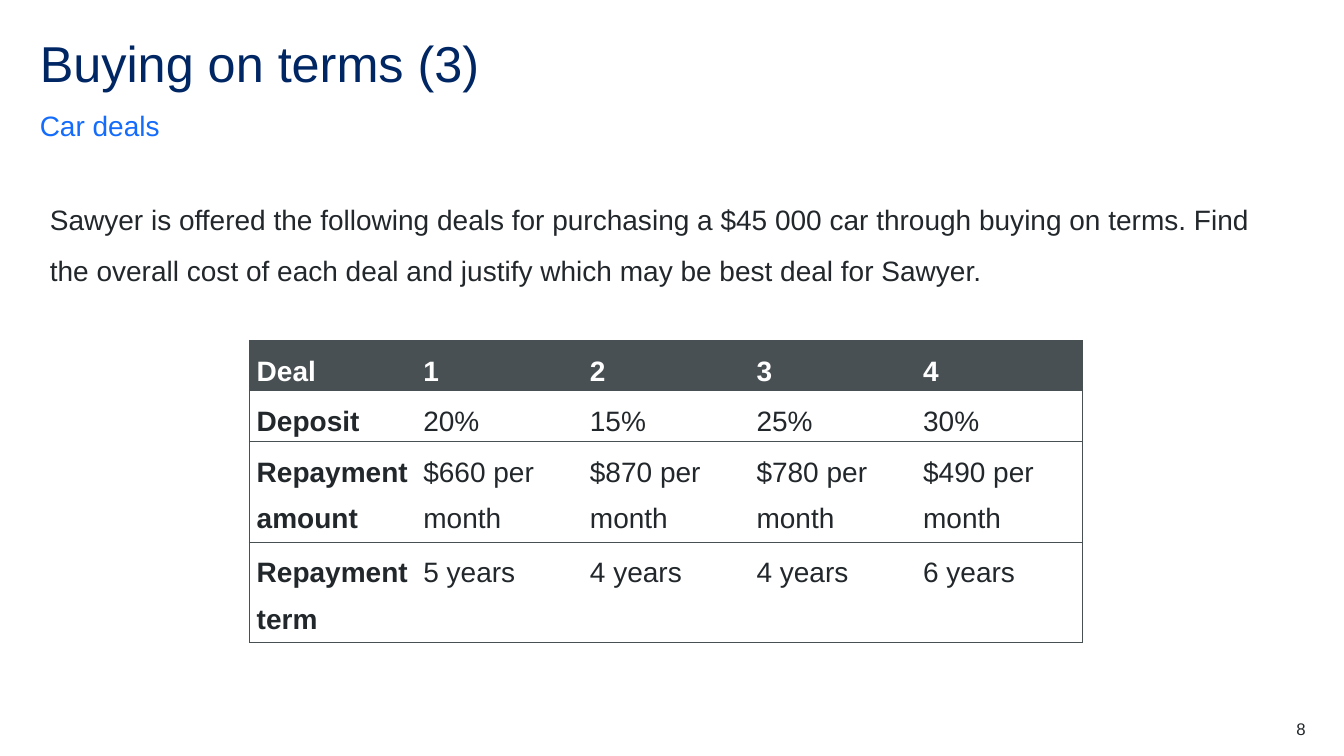
import pptx
import pptx.dml.color
import pptx.enum.text
import pptx.oxml.ns
import pptx.util
import lxml.etree

Pt = pptx.util.Pt
RGBColor = pptx.dml.color.RGBColor
Align = pptx.enum.text.PP_ALIGN
Anchor = pptx.enum.text.MSO_ANCHOR
AutoSize = pptx.enum.text.MSO_AUTO_SIZE

NAVY = RGBColor(0x00, 0x26, 0x64)
BLUE = RGBColor(0x14, 0x6C, 0xFD)
INK = RGBColor(0x22, 0x27, 0x2B)
SLATE = RGBColor(0x49, 0x50, 0x54)
WHITE = RGBColor(0xFF, 0xFF, 0xFF)

FONT = "Arial"
SLIDE_WIDTH, SLIDE_HEIGHT = 960, 540
LEFT = 28.4
CONTENT_WIDTH = 904.3
BORDER_WIDTH = 0.5

QUESTION = (
    "Sawyer is offered the following deals for purchasing a $45 000 car through "
    "buying on terms. Find the overall cost of each deal and justify which may be "
    "best deal for Sawyer."
)
DEALS = [
    ["Deal", "1", "2", "3", "4"],
    ["Deposit", "20%", "15%", "25%", "30%"],
    ["Repayment amount", "$660 per month", "$870 per month", "$780 per month", "$490 per month"],
    ["Repayment term", "5 years", "4 years", "4 years", "6 years"],
]
ROW_HEIGHTS = [36, 36, 72, 72]


def sub_element(parent, tag, **attributes):
    return lxml.etree.SubElement(parent, pptx.oxml.ns.qn(tag), attributes)


def write_text(frame, text, size, color, bold=False, spacing=1.0, before=0, after=0,
               align=Align.LEFT):
    paragraph = frame.paragraphs[0]
    paragraph.alignment = align
    paragraph.line_spacing = spacing
    paragraph.space_before = Pt(before)
    paragraph.space_after = Pt(after)
    run = paragraph.add_run()
    run.text = text
    run.font.name = FONT
    run.font.size = Pt(size)
    run.font.bold = bold
    run.font.color.rgb = color
    return paragraph


def prepare_box(shape, box, anchor, inset_x=0, inset_y=0, auto_size=AutoSize.NONE):
    shape.left, shape.top, shape.width, shape.height = map(Pt, box)
    frame = shape.text_frame
    frame.word_wrap = True
    frame.auto_size = auto_size
    frame.vertical_anchor = anchor
    frame.margin_left = frame.margin_right = Pt(inset_x)
    frame.margin_top = frame.margin_bottom = Pt(inset_y)
    return frame


def remove_bullet(paragraph):
    properties = paragraph._p.get_or_add_pPr()
    properties.set("marL", "0")
    properties.set("indent", "0")
    sub_element(properties, "a:buNone")


def add_heading(slide, box):
    left, top, width, height = box
    title = prepare_box(slide.shapes.title, (left, top, width, 43.2), Anchor.TOP)
    write_text(title, "Buying on terms (3)", 36, NAVY, spacing=0.9)
    subtitle_box = (left, top + height - 24.5, width, 24.5)
    subtitle = prepare_box(slide.placeholders[1], subtitle_box, Anchor.BOTTOM)
    remove_bullet(write_text(subtitle, "Car deals", 20, BLUE, spacing=1.5, after=12))


def add_question(slide, box):
    frame = prepare_box(slide.placeholders[2], box, Anchor.MIDDLE, 7.2, 3.6,
                        AutoSize.SHAPE_TO_FIT_TEXT)
    remove_bullet(write_text(frame, QUESTION, 20, INK, spacing=1.5))


def set_border(cell, side, visible):
    line = sub_element(cell._tc.get_or_add_tcPr(), f"a:ln{side}", w=str(Pt(BORDER_WIDTH)))
    if visible:
        sub_element(sub_element(line, "a:solidFill"), "a:srgbClr", val=str(SLATE))
    else:
        sub_element(line, "a:noFill")


def add_deals_table(slide, box):
    column_count = len(DEALS[0])
    frame = slide.shapes.add_table(len(DEALS), column_count, *map(Pt, box))
    table = frame.table
    table.horz_banding = False
    for column in table.columns:
        column.width = Pt(box[2] / column_count)
    for row_index, values in enumerate(DEALS):
        table.rows[row_index].height = Pt(ROW_HEIGHTS[row_index])
        header = row_index == 0
        for column_index, value in enumerate(values):
            cell = table.cell(row_index, column_index)
            cell.margin_left = cell.margin_right = Pt(5.4)
            cell.margin_top = cell.margin_bottom = 0
            set_border(cell, "L", column_index == 0)
            set_border(cell, "R", column_index == column_count - 1)
            set_border(cell, "T", True)
            set_border(cell, "B", True)
            if header:
                cell.fill.solid()
                cell.fill.fore_color.rgb = SLATE
            else:
                cell.fill.background()
            write_text(cell.text_frame, value, 20, WHITE if header else INK,
                       bold=header or column_index == 0, spacing=1.5, before=6, after=6)


def add_page_number(slide, box):
    shape = slide.shapes.add_textbox(*map(Pt, box))
    frame = prepare_box(shape, box, Anchor.TOP)
    write_text(frame, "8", 12, INK, align=Align.RIGHT)


def main():
    presentation = pptx.Presentation()
    presentation.slide_width = Pt(SLIDE_WIDTH)
    presentation.slide_height = Pt(SLIDE_HEIGHT)
    slide = presentation.slides.add_slide(presentation.slide_layouts.get_by_name("Two Content"))
    add_heading(slide, (LEFT, 28, CONTENT_WIDTH, 73.5))
    add_question(slide, (LEFT, 131, 895, 75.6))
    add_deals_table(slide, (178, 243, 595, sum(ROW_HEIGHTS)))
    add_page_number(slide, (876, 513.5, 56.7, 14.4))
    presentation.save("out.pptx")


if __name__ == "__main__":
    main()
